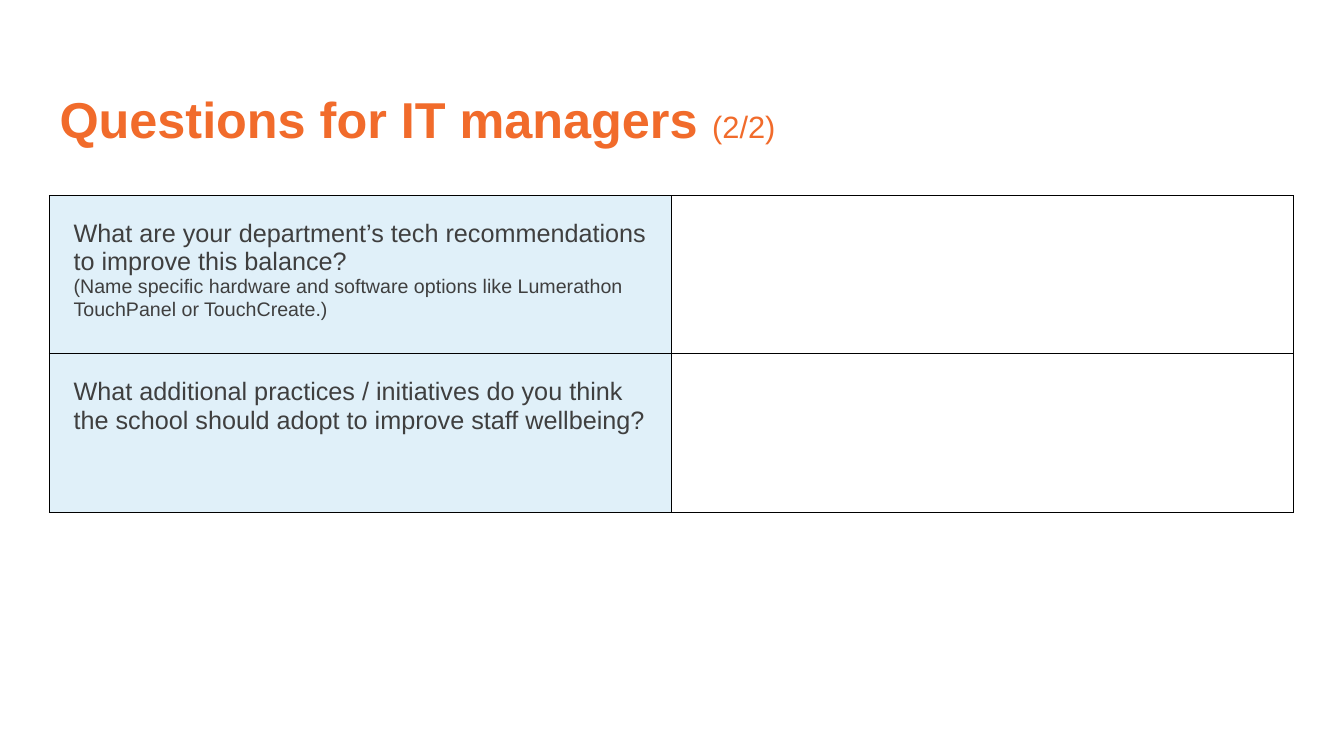
import pptx
import pptx.util
import pptx.dml.color
import pptx.enum.text
import pptx.oxml
import pptx.oxml.ns

Inches = pptx.util.Inches
COLORS = {"title": "F16B2B", "text": "3F3F3F", "ask": "E0F0F9", "reply": "FFFFFF", "line": "000000"}
ROWS = [
    [
        ("What are your department’s tech recommendations to improve this balance?", 18),
        ("(Name specific hardware and software options like Lumerathon TouchPanel or TouchCreate.)", 14),
    ],
    [("What additional practices / initiatives do you think the school should adopt to improve staff wellbeing?", 18)],
]


def rgb(name):
    return pptx.dml.color.RGBColor.from_string(COLORS[name])


def write(para, text, size=18, color="text", bold=False, face="Arial"):
    run = para.add_run()
    run.text = text
    run.font.name = face
    run.font.size = pptx.util.Pt(size)
    run.font.bold = bold
    run.font.color.rgb = rgb(color)


class Deck:
    def __init__(self):
        self.file = pptx.Presentation()
        self.file.slide_width = Inches(13.33)
        self.file.slide_height = Inches(7.5)
        self.slide = self.file.slides.add_slide(self.file.slide_layouts[5])

    def title(self, parts, left, top, width, height):
        shape = self.slide.shapes.title
        shape.left, shape.top = Inches(left), Inches(top)
        shape.width, shape.height = Inches(width), Inches(height)
        frame = shape.text_frame
        frame.word_wrap = True
        frame.auto_size = pptx.enum.text.MSO_AUTO_SIZE.NONE
        frame.vertical_anchor = pptx.enum.text.MSO_ANCHOR.MIDDLE
        para = frame.paragraphs[0]
        para.alignment = pptx.enum.text.PP_ALIGN.LEFT
        para.line_spacing = 0.9
        for text, size, bold in parts:
            write(para, text, size=size, color="title", bold=bold)

    def border(self, cell):
        props = cell._tc.get_or_add_tcPr()
        for side in "LRTB":
            props.append(pptx.oxml.parse_xml(
                f'<a:ln{side} {pptx.oxml.ns.nsdecls("a")} w="{pptx.util.Pt(0.75)}">'
                f'<a:solidFill><a:srgbClr val="{COLORS["line"]}"/></a:solidFill></a:ln{side}>'
            ))

    def fill(self, cell, color):
        self.border(cell)
        cell.fill.solid()
        cell.fill.fore_color.rgb = rgb(color)

    def table(self, rows, left, top, width, height):
        grid = self.slide.shapes.add_table(
            len(rows), 2, Inches(left), Inches(top), Inches(width), Inches(height)
        ).table
        grid.first_row = grid.horz_banding = False
        for index, lines in enumerate(rows):
            ask, reply = grid.cell(index, 0), grid.cell(index, 1)
            self.fill(ask, "ask")
            self.fill(reply, "reply")
            ask.margin_left = ask.margin_right = Inches(0.24)
            ask.margin_top = ask.margin_bottom = Inches(0.24)
            frame = ask.text_frame
            for order, (text, size) in enumerate(lines):
                para = frame.add_paragraph() if order else frame.paragraphs[0]
                write(para, text, size=size)


def main():
    deck = Deck()
    deck.title([("Questions for IT managers ", 36, True), ("(2/2)", 22, False)], 0.49, 0.49, 11.5, 1.45)
    deck.table(ROWS, 0.49, 1.94, 12.34, 3.14)
    deck.file.save("out.pptx")


if __name__ == "__main__":
    main()
